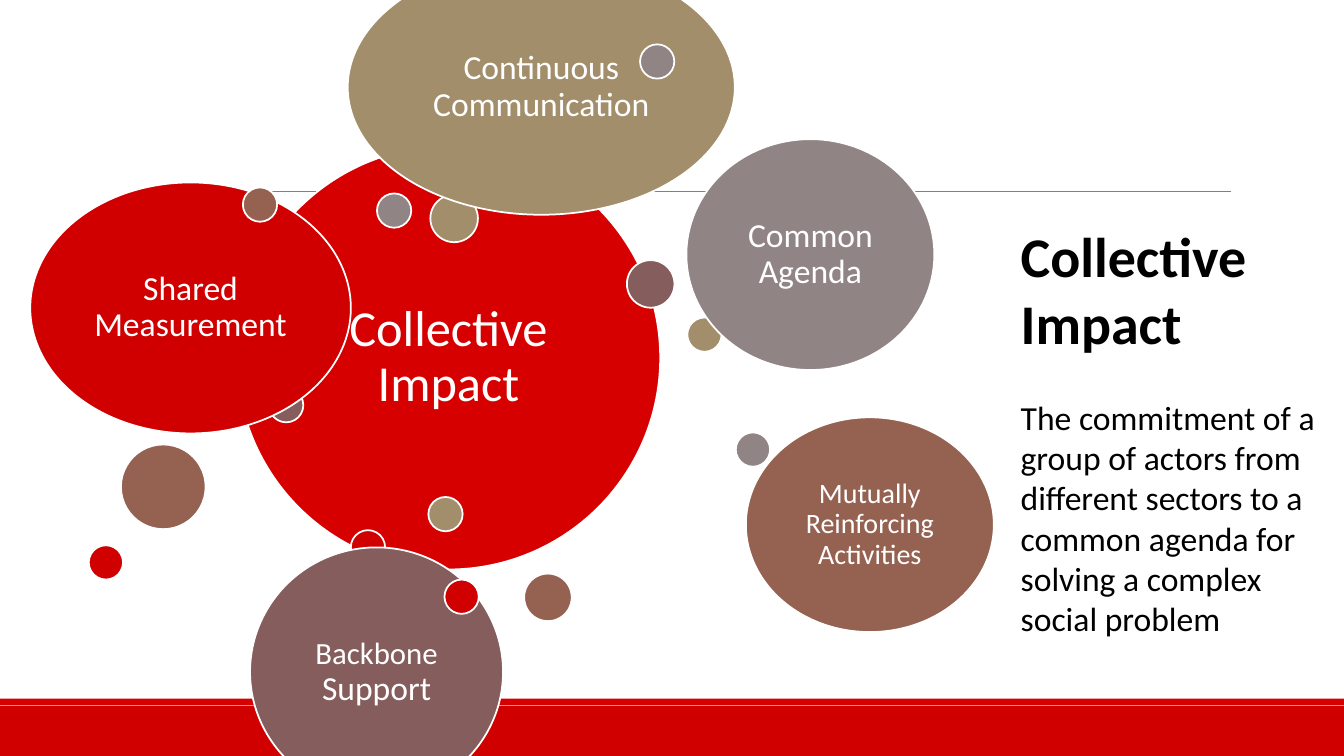
from pptx import Presentation
from pptx.dml.color import RGBColor
from pptx.enum.shapes import MSO_CONNECTOR as LINE, MSO_SHAPE as SHAPE
from pptx.enum.text import MSO_ANCHOR as ANCHOR, PP_ALIGN as ALIGN
from pptx.oxml.ns import qn
from pptx.util import Pt
from lxml import etree

RED = RGBColor(0xD0, 0x00, 0x00)
BRIGHT = RGBColor(0xD6, 0x00, 0x00)
SAND = RGBColor(0xA2, 0x8E, 0x6A)
BROWN = RGBColor(0x95, 0x62, 0x51)
GRAY = RGBColor(0x91, 0x84, 0x85)
PLUM = RGBColor(0x85, 0x5D, 0x5D)
RULE = RGBColor(0x80, 0x80, 0x80)
WHITE = RGBColor(0xFF, 0xFF, 0xFF)
BLACK = RGBColor(0x00, 0x00, 0x00)

SMALL, MID, LARGE = 24.5, 34, 60.5

deck = Presentation()
deck.slide_width, deck.slide_height = Pt(960), Pt(540)
slide = deck.slides.add_slide(deck.slide_layouts[6])
shapes = slide.shapes


def add_form(kind, left, top, width, height, color):
    form = shapes.add_shape(kind, Pt(left), Pt(top), Pt(width), Pt(height))
    form.shadow.inherit = False
    form.fill.solid()
    form.fill.fore_color.rgb = color
    form.line.fill.background()
    return form


def add_run(para, text, size, color, bold=False):
    run = para.add_run()
    run.text = text
    font = run.font
    font.name, font.size, font.bold = "Calibri", Pt(size), bold
    font.color.rgb = color


# Footer bands and top rule
add_form(SHAPE.RECTANGLE, 0, 504, 960, 36, RED)
add_form(SHAPE.RECTANGLE, 0, 499, 960, 4.75, BRIGHT)
rule = shapes.add_connector(LINE.STRAIGHT, Pt(94.5), Pt(136.8), Pt(879), Pt(136.8))
rule.line.color.rgb = RULE
rule.line.width = Pt(0.5)
etree.SubElement(rule._element.spPr, qn("a:effectLst"))

# Title and definition
box = shapes.add_textbox(Pt(722), Pt(154.8), Pt(228.2), Pt(365.8))
frame = box.text_frame
frame.word_wrap = True
add_run(frame.paragraphs[0], "Collective Impact", 40, BLACK, True)
body = frame.add_paragraph()
body.space_before = Pt(29)
add_run(body, "The commitment of a group of actors from different sectors "
        "to a common agenda for solving a complex social problem", 24, BLACK)

# Bubbles, back to front: left, top, width, height, color, inset, runs
bubbles = [
    (169.2, 104.4, 302.4, 302.4, BRIGHT, 10.8, [("Collective Impact", 36)]),
    (250.6, 378.7, SMALL, SMALL, RED, 0, []),
    (491, 226.8, SMALL, SMALL, SAND, 0, []),
    (374.4, 409.7, MID, MID, BROWN, 0, []),
    (269.3, 138.2, SMALL, SMALL, GRAY, 0, []),
    (192.2, 277.2, SMALL, SMALL, PLUM, 0, []),
    (21.6, 130.3, 229, 179.3, RED, 7.2, [("Shared Measurement", 24)]),
    (307.4, 139, MID, MID, SAND, 0, []),
    (86.4, 317.5, LARGE, LARGE, BROWN, 0, []),
    (490.3, 99.4, 177.1, 164.9, GRAY, 7.2, [("Common Agenda", 24)]),
    (447.8, 185.8, MID, MID, PLUM, 0, []),
    (63.4, 389.5, SMALL, SMALL, RED, 0, []),
    (306, 355, SMALL, SMALL, SAND, 0, []),
    (532.8, 298.1, 177.1, 153.4, BROWN, 6,
     [("Mutually Reinforcing Activities", 20)]),
    (525.6, 308.9, SMALL, SMALL, GRAY, 0, []),
    (178.6, 391, 180.7, 177.8, PLUM, 6.6, [("Backbone", 22), (" Support", 24)]),
    (317.5, 414, SMALL, SMALL, RED, 0, []),
    (248.4, -28.8, 276.5, 182.2, SAND, 7.2, [("Continuous Communication", 24)]),
    (173.5, 133.9, SMALL, SMALL, BROWN, 0, []),
    (457.2, 31.7, SMALL, SMALL, GRAY, 0, []),
]
for left, top, width, height, color, inset, runs in bubbles:
    bubble = add_form(SHAPE.OVAL, left, top, width, height, color)
    bubble.line.color.rgb = WHITE
    bubble.line.width = Pt(1.25)
    if runs:
        frame = bubble.text_frame
        frame.word_wrap = True
        frame.vertical_anchor = ANCHOR.MIDDLE
        frame.margin_left = frame.margin_right = Pt(inset)
        frame.margin_top = frame.margin_bottom = Pt(inset)
        para = frame.paragraphs[0]
        para.alignment = ALIGN.CENTER
        para.line_spacing = 0.9
        for text, size in runs:
            add_run(para, text, size, WHITE)

deck.save("out.pptx")
